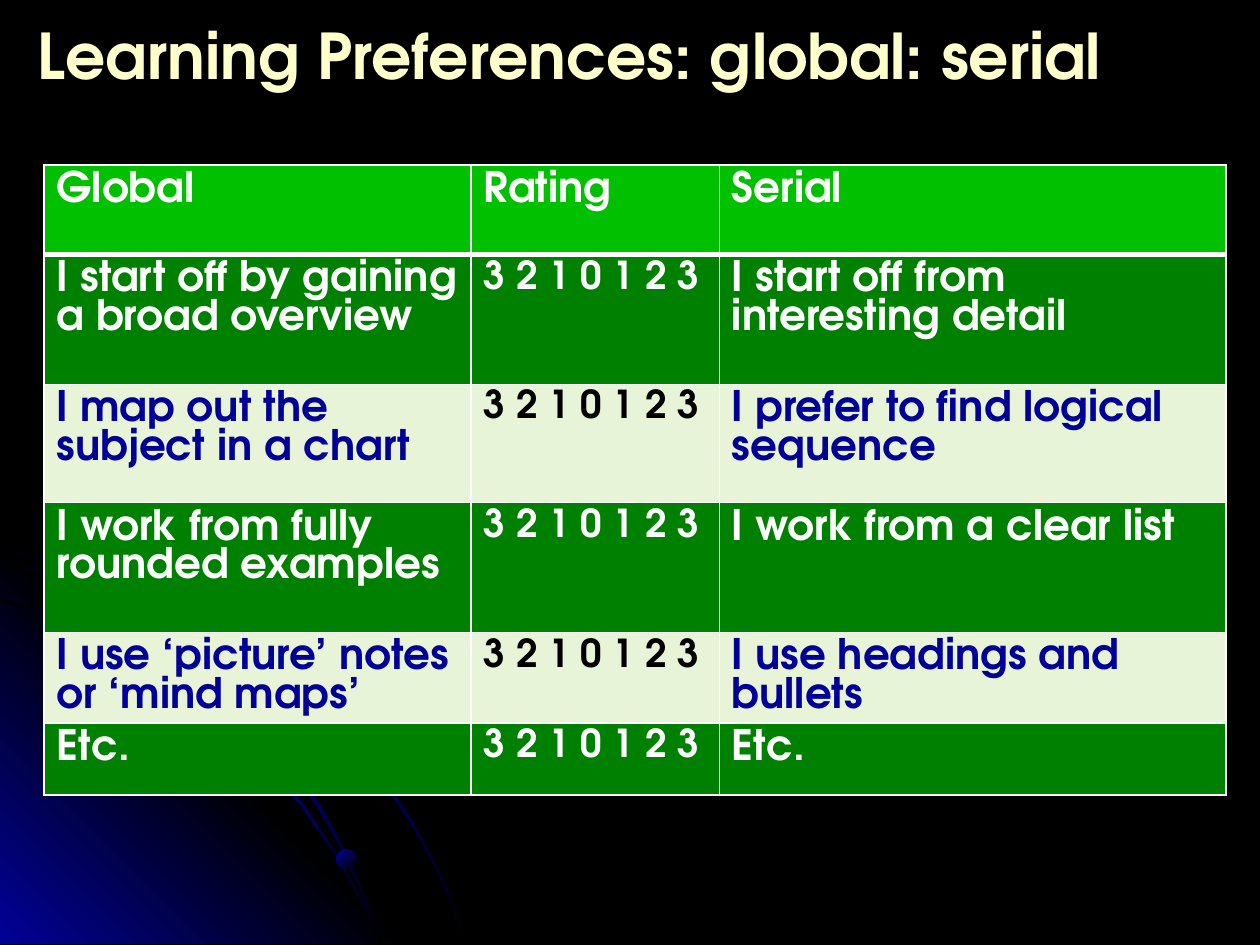
from dataclasses import dataclass

from lxml import etree
from pptx import Presentation
from pptx import util as u
from pptx.dml.color import RGBColor
from pptx.enum import shapes, text
from pptx.oxml.ns import qn


@dataclass(frozen=True)
class Theme:
    font: str = "TeX Gyre Adventor"
    back: str = "000000"
    glow: str = "010199"
    title: str = "FFFFCC"
    head: str = "00C000"
    dark: str = "008000"
    pale: str = "E7F4D8"
    white: str = "FFFFFF"
    title_size: int = 36
    cell_size: int = 24
    scale_size: int = 22


theme = Theme()


def shade(shape, tones, angle):
    """Fill with evenly spaced tones at a clockwise angle; no line or shadow."""
    shape.shadow.inherit = False
    shape.line.fill.background()
    shape.fill.gradient()
    grad = shape._element.spPr.find(qn("a:gradFill"))
    stops = grad.find(qn("a:gsLst"))
    for old in list(stops):
        stops.remove(old)
    for i, tone in enumerate(tones):
        place = str(100000 * i // (len(tones) - 1))
        stop = etree.SubElement(stops, qn("a:gs"), pos=place)
        etree.SubElement(stop, qn("a:srgbClr"), val=tone)
    grad.find(qn("a:lin")).set("ang", str(angle * 60000))


def style(para, size, color):
    para.font.name = theme.font
    para.font.size = u.Pt(size)
    para.font.bold = True
    para.font.color.rgb = RGBColor.from_string(color)


prs = Presentation()
prs.slide_width = u.Inches(10)
prs.slide_height = u.Inches(7.5)
slide = prs.slides.add_slide(prs.slide_layouts[5])
slide.background.fill.solid()
slide.background.fill.fore_color.rgb = RGBColor.from_string(theme.back)

# Corner glow and curved ribbons, in hundredths of an inch
arc_a = [
    (57, 447), (28, 441), (0, 435), (0, 438), (28, 443), (56, 449),
    (97, 461), (135, 478), (173, 499), (208, 523), (241, 549), (271, 579),
    (298, 612), (323, 649), (337, 673), (350, 698), (360, 723), (370, 749),
    (372, 749), (362, 723), (352, 698), (339, 673), (325, 648), (300, 611),
    (272, 578), (242, 548), (209, 521), (174, 497), (136, 477), (98, 459)]
wedge = [(322, 749), (0, 749), (0, 427)]
arc_b = [
    (285, 714), (294, 732), (301, 749), (303, 749), (296, 730), (286, 712),
    (266, 676), (242, 640), (215, 606), (184, 576), (152, 549), (117, 526),
    (79, 505), (41, 488), (0, 475), (0, 477), (39, 490), (77, 507),
    (115, 528), (150, 551), (183, 578), (213, 608), (240, 641), (265, 677)]
arc_c = [
    (0, 442), (0, 444), (36, 457), (74, 475), (109, 494), (142, 518),
    (173, 544), (202, 575), (227, 605), (252, 641), (267, 667), (280, 694),
    (292, 722), (301, 749), (303, 749), (294, 720), (282, 693), (269, 665),
    (254, 639), (229, 603), (204, 573), (175, 543), (144, 516), (111, 493),
    (76, 473), (39, 455)]
streak = (theme.back, theme.glow, theme.back)
corner = (theme.glow, theme.back, theme.glow)
for points, tones, angle in (
        (arc_a, streak, 45), (wedge, corner, 315),
        (arc_b, streak, 45), (arc_c, streak, 45)):
    path = slide.shapes.build_freeform(*points[0], scale=u.Inches(0.01))
    path.add_line_segments(points[1:], close=True)
    shade(path.convert_to_shape(), tones, angle)

bead = slide.shapes.add_shape(
    shapes.MSO_SHAPE.OVAL, u.Inches(2.67), u.Inches(6.74),
    u.Inches(0.16), u.Inches(0.16))
shade(bead, (theme.glow, theme.back), 45)

# Title
title = slide.shapes.title
title.left, title.top = u.Inches(0.2), u.Inches(0.13)
title.width, title.height = u.Inches(9.53), u.Inches(0.95)
frame = title.text_frame
frame.text = "Learning Preferences: global: serial"
frame.word_wrap = True
frame.auto_size = text.MSO_AUTO_SIZE.NONE
frame.vertical_anchor = text.MSO_ANCHOR.TOP
frame.margin_top = 0
para = frame.paragraphs[0]
para.alignment = text.PP_ALIGN.LEFT
style(para, theme.title_size, theme.title)

# Table: each statement pair shares one rating scale
scale = "3 2 1 0 1 2 3"
pairs = [
    ("I start off by gaining a broad overview",
     "I start off from interesting detail"),
    ("I map out the subject in a chart", "I prefer to find logical sequence"),
    ("I work from fully rounded examples", "I work from a clear list"),
    ("I use ‘picture’ notes or ‘mind maps’", "I use headings and bullets"),
    ("Etc.", "Etc.")]
rows = [("Global", "Rating", "Serial")]
rows += [(left, scale, right) for left, right in pairs]
widths = (3.39, 1.97, 4.02)
heights = (0.71, 1.03, 0.94, 1.03, 0.72, 0.57)

table = slide.shapes.add_table(
    len(rows), len(widths), u.Inches(0.35), u.Inches(1.31),
    u.Inches(sum(widths)), u.Inches(sum(heights))).table
for col, width in zip(table.columns, widths):
    col.width = u.Inches(width)
for row, height in zip(table.rows, heights):
    row.height = u.Inches(height)

for r, row in enumerate(rows):
    pale = r > 0 and r % 2 == 0
    fill = theme.head if r == 0 else theme.pale if pale else theme.dark
    for c, words in enumerate(row):
        cell = table.cell(r, c)
        cell.text = words
        rating = r > 0 and c == 1
        size = theme.scale_size if rating else theme.cell_size
        color = theme.white
        if pale:
            color = theme.back if rating else theme.glow
        style(cell.text_frame.paragraphs[0], size, color)
        props = cell._tc.get_or_add_tcPr()
        for side in "LRTB":
            thick = (r, side) in ((0, "B"), (1, "T"))
            edge = etree.SubElement(
                props, qn("a:ln" + side), w=str(u.Pt(3 if thick else 1)))
            solid = etree.SubElement(edge, qn("a:solidFill"))
            etree.SubElement(solid, qn("a:srgbClr"), val=theme.white)
        cell.fill.solid()
        cell.fill.fore_color.rgb = RGBColor.from_string(fill)

prs.save("out.pptx")
